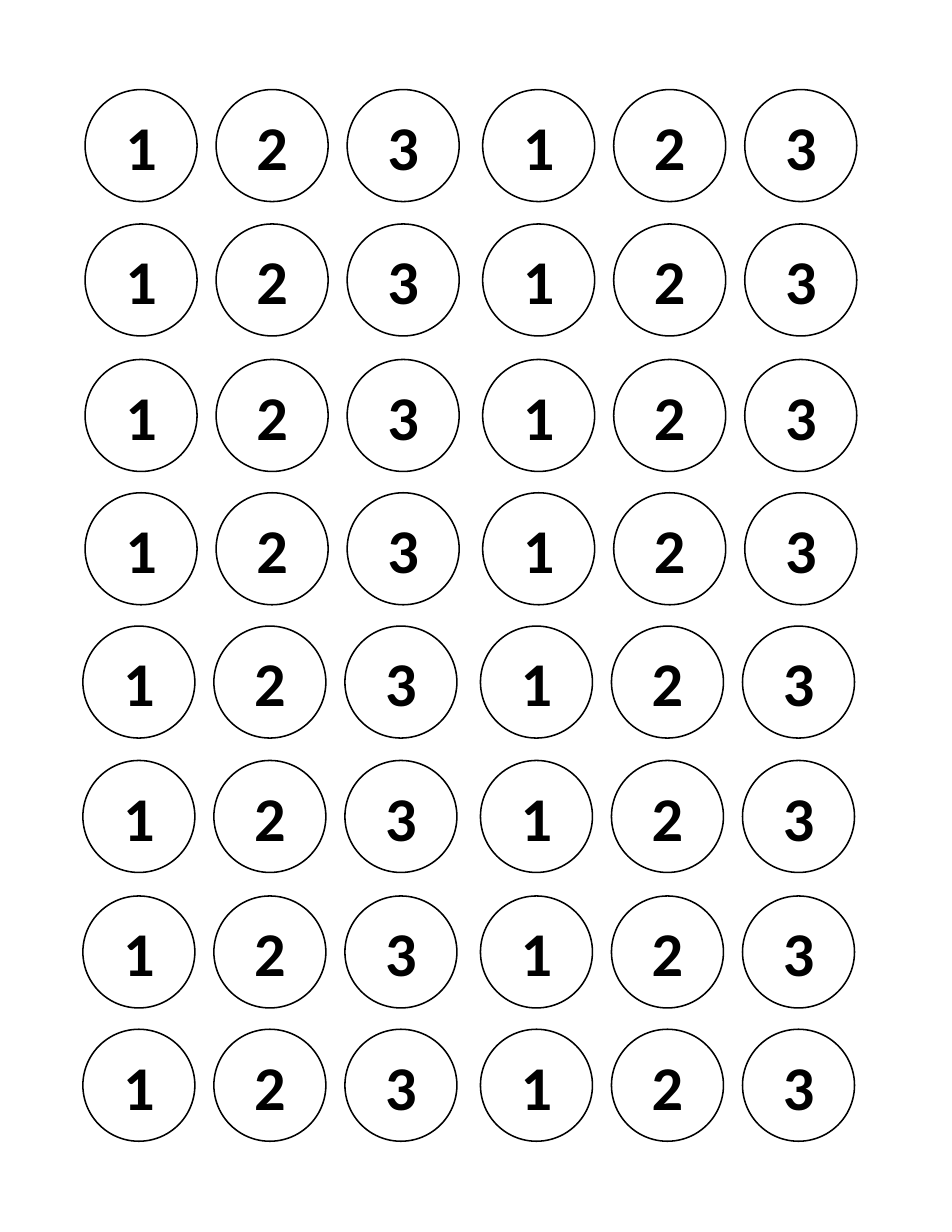
from pptx import Presentation
from pptx import util as u
from pptx.dml.color import RGBColor
from pptx.enum import shapes, text

COLORS = {"ink": "000000"}
INK = RGBColor.from_string(COLORS["ink"])

prs = Presentation()
prs.slide_width, prs.slide_height = u.Inches(8.5), u.Inches(11)
s = prs.slides.add_slide(prs.slide_layouts[6])

# Grid: two bands of four rows, each row holding two sets of 1-2-3
DIAMETER = 1
COLUMN_STEP = 1.17
SET_STEP = 3.55
BANDS = [(0.76, 0.8), (0.74, 5.59)]
ROW_OFFSETS = [0, 1.2, 2.41, 3.6]

for band_left, band_top in BANDS:
    for row_offset in ROW_OFFSETS:
        for set_index in range(2):
            for column, number in enumerate("123"):
                # Circle outline
                left = band_left + set_index * SET_STEP + column * COLUMN_STEP
                sp = s.shapes.add_shape(
                    shapes.MSO_SHAPE.OVAL,
                    u.Inches(left), u.Inches(band_top + row_offset),
                    u.Inches(DIAMETER), u.Inches(DIAMETER))
                sp.shadow.inherit = False
                sp.fill.background()
                sp.line.color.rgb = INK
                sp.line.width = u.Pt(1)

                # Number
                tf = sp.text_frame
                tf.vertical_anchor = text.MSO_ANCHOR.MIDDLE
                p = tf.paragraphs[0]
                p.alignment = text.PP_ALIGN.CENTER
                r = p.add_run()
                r.text = number
                r.font.name = "Calibri"
                r.font.size = u.Pt(40)
                r.font.bold = True
                r.font.color.rgb = INK

prs.save("out.pptx")
